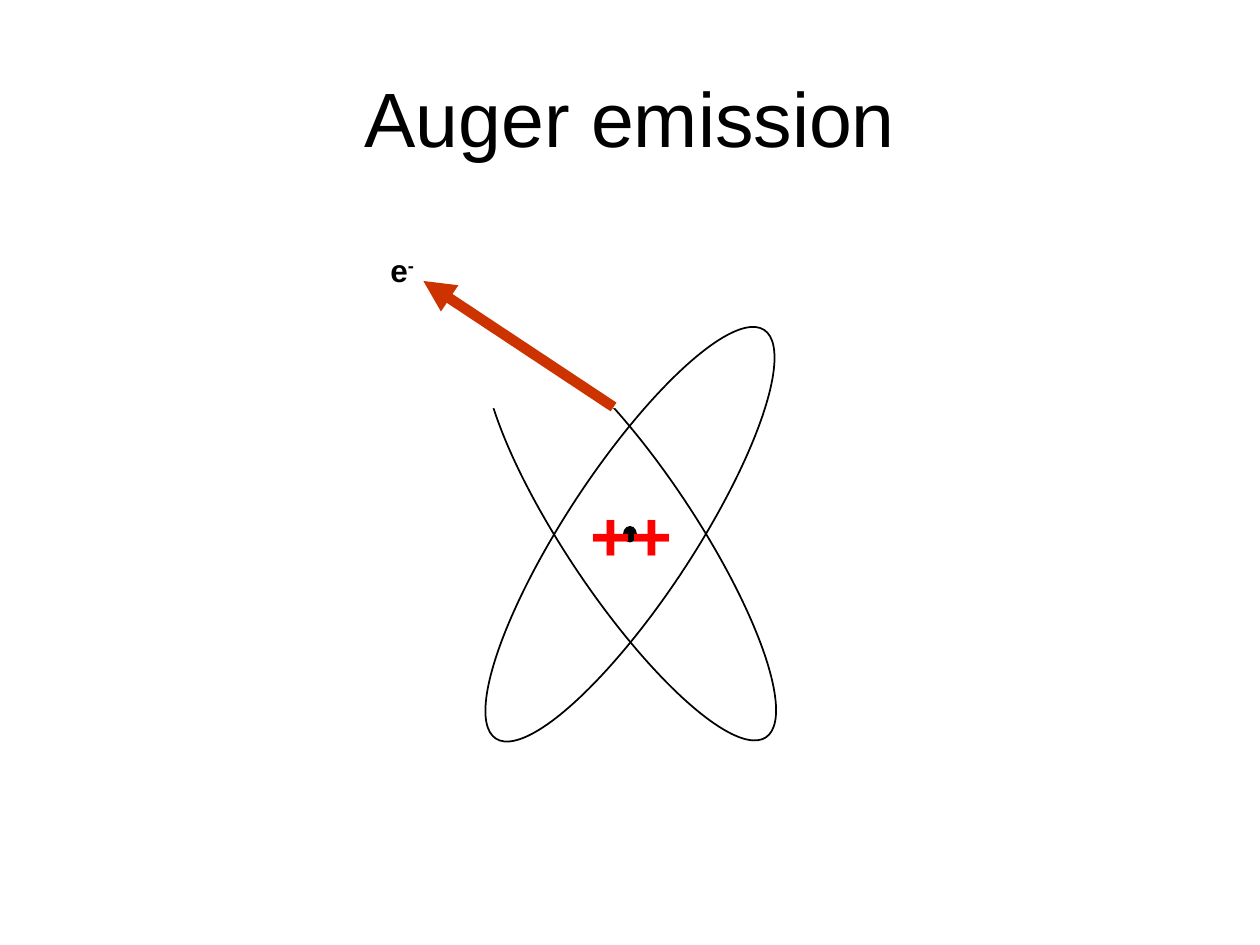
"""Build the Auger emission slide."""
from dataclasses import dataclass

from lxml.etree import SubElement
from pptx import Presentation
from pptx.dml.color import RGBColor
from pptx.enum.shapes import MSO_CONNECTOR as Connector, MSO_SHAPE as Shape
from pptx.enum.text import MSO_ANCHOR as Anchor, MSO_AUTO_SIZE as AutoSize, PP_ALIGN as Align
from pptx.oxml.ns import qn
from pptx.slide import Slide
from pptx.util import Inches, Pt

FONT = "Arial"
BLACK, WHITE, RED, RUST = "000000", "FFFFFF", "FF0000", "CC3300"


@dataclass
class Figure:
    """A preset shape with its place, turn and colours."""
    kind: Shape
    place: tuple[float, float, float, float]
    turn: float = 0
    fill: str | None = None
    line_width: float | None = None


@dataclass
class Label:
    """A short bold text with an optional superscript."""
    text: str
    place: tuple[float, float, float, float]
    size: float
    color: str
    superscript: str = ""


ORBIT = (3.06, 3.73, 3.88, 1.02)
FIGURES = [
    Figure(Shape.OVAL, ORBIT, turn=56.2, line_width=1),
    Figure(Shape.RECTANGLE, (3.09, 1.72, 1.85, 1.52), fill=WHITE),
    Figure(Shape.OVAL, ORBIT, turn=303.3, line_width=1),
    Figure(Shape.OVAL, (4.95, 4.18, 0.1, 0.12), fill=BLACK, line_width=0.75),
]
LABELS = [
    Label("++", (4.59, 3.85, 0.9, 0.77), 40, RED),
    Label("e", (3, 1.94, 0.4, 0.4), 18, BLACK, superscript="-"),
]


def rgb(color: str) -> RGBColor:
    """Turn a hex string into a colour."""
    return RGBColor.from_string(color)


def set_font(paragraph, size: float, color: str, bold: bool = False) -> None:
    """Format the font of a paragraph."""
    font = paragraph.font
    font.name, font.size, font.bold = FONT, Pt(size), bold
    font.color.rgb = rgb(color)


def add_title(page: Slide, text: str) -> None:
    """Fill and place the title placeholder."""
    title = page.shapes.title
    title.left, title.top, title.width, title.height = map(Inches, (0.5, 0.3, 9, 1.25))
    title.text_frame.text = text
    title.text_frame.vertical_anchor = Anchor.MIDDLE
    para = title.text_frame.paragraphs[0]
    para.alignment = Align.CENTER
    set_font(para, 44, BLACK)


def add_figure(page: Slide, figure: Figure) -> None:
    """Draw one preset shape."""
    shape = page.shapes.add_shape(figure.kind, *map(Inches, figure.place))
    shape.shadow.inherit = False
    shape.rotation = figure.turn
    if figure.fill:
        shape.fill.solid()
        shape.fill.fore_color.rgb = rgb(figure.fill)
    else:
        shape.fill.background()
    if figure.line_width:
        shape.line.color.rgb = rgb(BLACK)
        shape.line.width = Pt(figure.line_width)
    else:
        shape.line.fill.background()


def add_label(page: Slide, label: Label) -> None:
    """Write one label."""
    frame = page.shapes.add_textbox(*map(Inches, label.place)).text_frame
    frame.word_wrap = False
    frame.auto_size = AutoSize.SHAPE_TO_FIT_TEXT
    para = frame.paragraphs[0]
    para.add_run().text = label.text
    if label.superscript:
        span = para.add_run()
        span.text = label.superscript
        span.font._element.set("baseline", "30000")
    set_font(para, label.size, label.color, bold=True)


def add_arrow(page: Slide, start: tuple[float, float], end: tuple[float, float]) -> None:
    """Draw the thick arrow of the emitted electron."""
    arrow = page.shapes.add_connector(Connector.STRAIGHT, *map(Inches, start + end))
    arrow.line.color.rgb = rgb(RUST)
    arrow.line.width = Pt(6)
    SubElement(arrow.line._get_or_add_ln(), qn("a:tailEnd"), type="triangle")
    SubElement(arrow._element.spPr, qn("a:effectLst"))


def main() -> None:
    """Build and save the deck."""
    deck = Presentation()
    deck.slide_width, deck.slide_height = Inches(10), Inches(7.5)
    page = deck.slides.add_slide(deck.slide_layouts[5])
    add_title(page, "Auger emission")
    for figure in FIGURES:
        add_figure(page, figure)
    for label in LABELS:
        add_label(page, label)
    add_arrow(page, (4.87, 3.23), (3.36, 2.23))
    deck.save("out.pptx")


if __name__ == "__main__":
    main()
